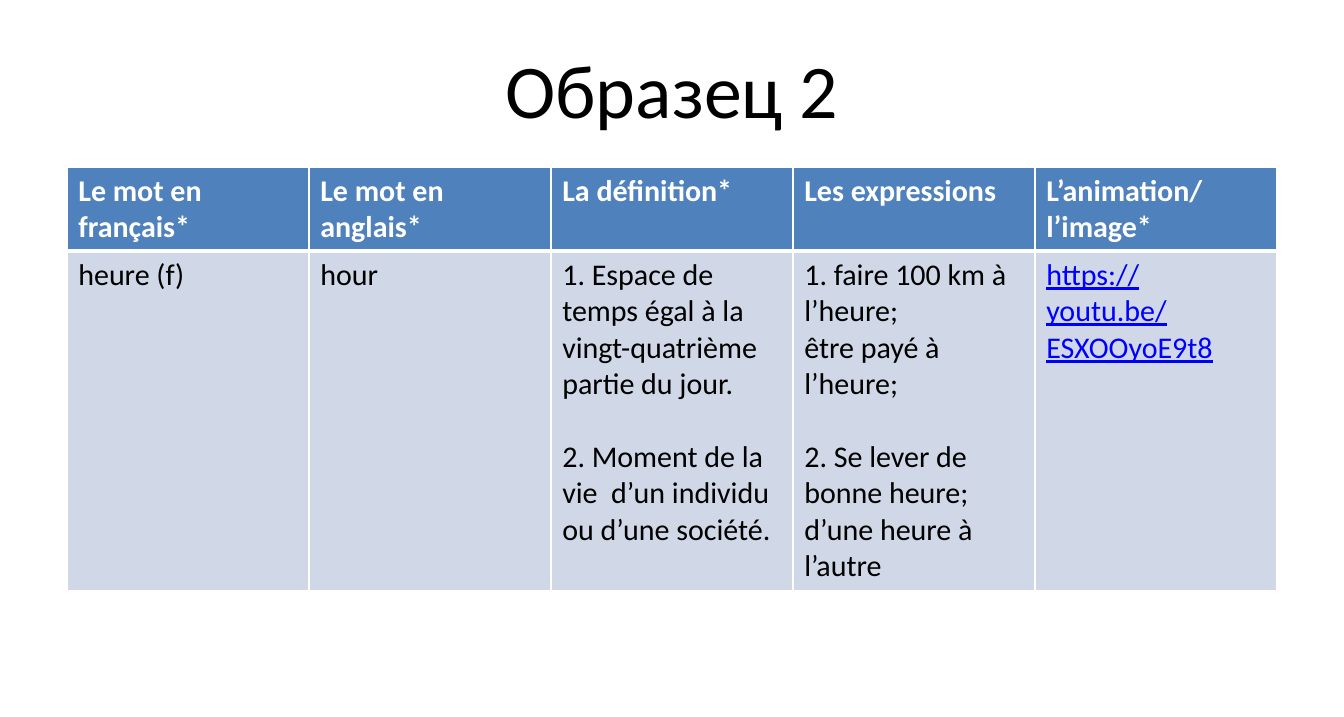
from lxml import etree
from pptx import Presentation
from pptx import util as u
from pptx.dml.color import RGBColor
from pptx.enum import text
from pptx.oxml.ns import qn

EMU_PER_PX = 8035
FONT = "Calibri"
COLORS = {"white": "FFFFFF", "black": "000000", "header": "4F81BD",
          "body": "D0D8E8", "link": "0000FF"}

LEFT, WIDTH = 67, 1210
TITLE_TOP, TITLE_HEIGHT = 29, 119
TABLE_TOP = 167
ROW_HEIGHTS = [84, 339]
GAP_PT = 23  # one text line between numbered meanings

HEADERS = ["Le mot en français*", "Le mot en anglais*", "La définition*",
           "Les expressions", "L’animation/ l’image*"]
# Each cell is a list of groups, each group a list of paragraphs
ENTRY = [
    [["heure (f)"]],
    [["hour"]],
    [["1. Espace de temps égal à la vingt-quatrième partie du jour."],
     ["2. Moment de la vie  d’un individu ou d’une société."]],
    [["1. faire 100 km à l’heure;", "être payé à l’heure;"],
     ["2. Se lever de bonne heure;", "d’une heure à l’autre"]],
    [["https://youtu.be/ESXOOyoE9t8"]],
]


def px(n):
    return u.Emu(n * EMU_PER_PX)


def rgb(name):
    return RGBColor.from_string(COLORS[name])


def style_font(p, size, color, bold=False, underline=None):
    font = p.font
    font.name, font.size = FONT, u.Pt(size)
    font.bold, font.underline = bold, underline
    font.color.rgb = rgb(color)


def add_title(s, wording):
    title = s.shapes.title
    title.left, title.top = px(LEFT), px(TITLE_TOP)
    title.width, title.height = px(WIDTH), px(TITLE_HEIGHT)
    tf = title.text_frame
    tf.text = wording
    tf.vertical_anchor = text.MSO_ANCHOR.MIDDLE
    p = tf.paragraphs[0]
    p.alignment = text.PP_ALIGN.CENTER
    style_font(p, 48, "black")


def set_borders(cell, top, bottom):
    tc_pr = cell._tc.get_or_add_tcPr()
    for side, width in (("L", 1), ("R", 1), ("T", top), ("B", bottom)):
        line = etree.SubElement(tc_pr, qn(f"a:ln{side}"), w=str(u.Pt(width)))
        fill = etree.SubElement(line, qn("a:solidFill"))
        etree.SubElement(fill, qn("a:srgbClr"), val=COLORS["white"])


def fill_cell(cell, groups, fill, color, bold=False, underline=None):
    cell.fill.solid()
    cell.fill.fore_color.rgb = rgb(fill)
    tf = cell.text_frame
    for g, group in enumerate(groups):
        for i, wording in enumerate(group):
            p = tf.paragraphs[0] if g == i == 0 else tf.add_paragraph()
            p.text = wording
            if g and i == 0:
                p.space_before = u.Pt(GAP_PT)
            style_font(p, 19, color, bold, underline)


def add_word_table(s):
    frame = s.shapes.add_table(2, len(HEADERS), px(LEFT), px(TABLE_TOP),
                               px(WIDTH), px(sum(ROW_HEIGHTS)))
    table = frame.table
    for row, height in zip(table.rows, ROW_HEIGHTS):
        row.height = px(height)
    for c, (header, groups) in enumerate(zip(HEADERS, ENTRY)):
        table.columns[c].width = px(WIDTH // len(HEADERS))
        head, body = table.cell(0, c), table.cell(1, c)
        set_borders(head, top=1, bottom=3)
        set_borders(body, top=3, bottom=1)
        fill_cell(head, [[header]], "header", "white", bold=True)
        is_link = groups[0][0].startswith("https")
        fill_cell(body, groups, "body", "link" if is_link else "black",
                  underline=is_link or None)


def main():
    prs = Presentation()
    prs.slide_width, prs.slide_height = px(1344), px(717)
    s = prs.slides.add_slide(prs.slide_layouts[5])

    # Title
    add_title(s, "Образец 2")

    # Vocabulary table
    add_word_table(s)

    prs.save("out.pptx")


if __name__ == "__main__":
    main()
